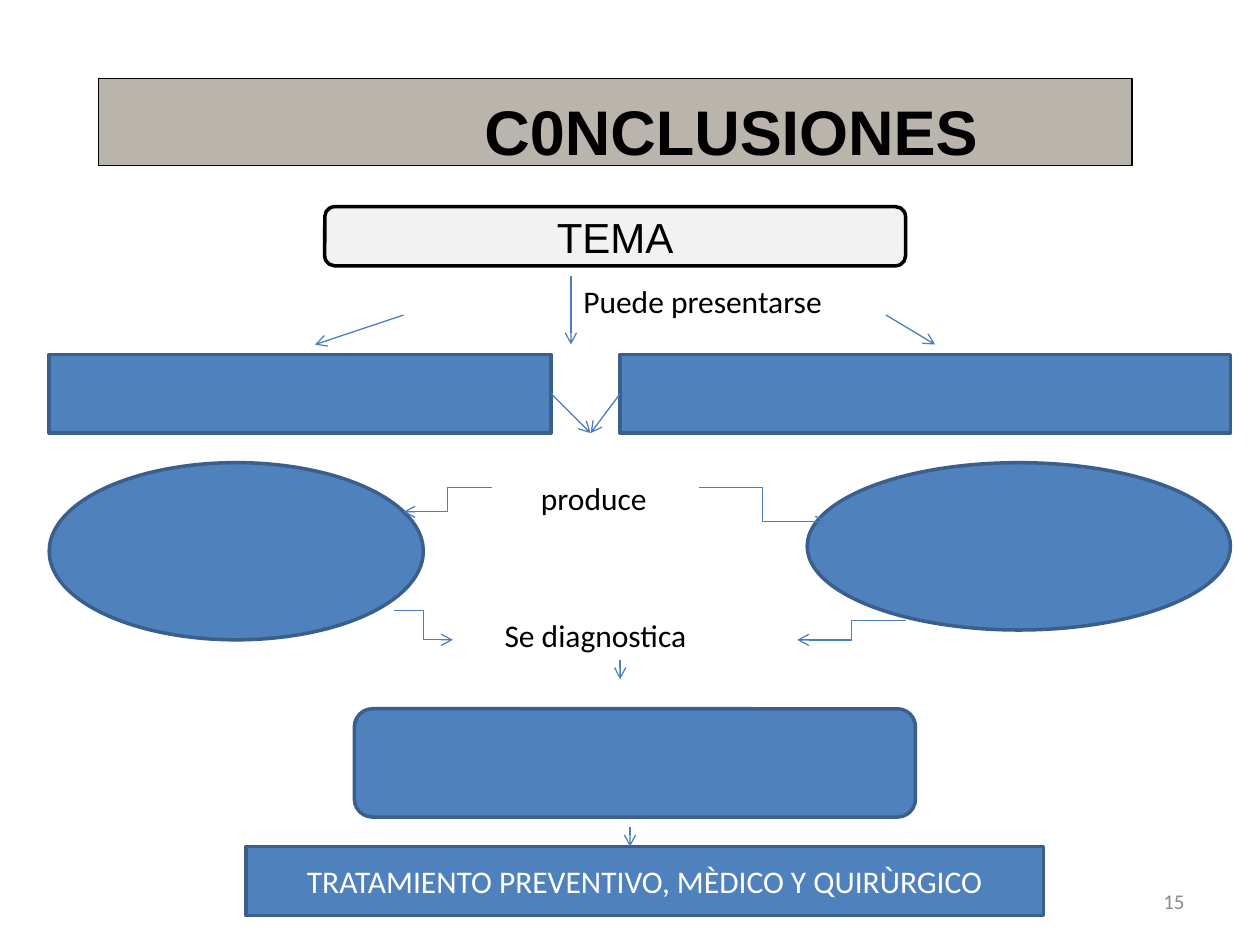
from lxml import etree
from pptx import Presentation, util as u
from pptx.dml.color import RGBColor
from pptx.enum import shapes, text
from pptx.oxml.ns import qn

BLACK = RGBColor(0x00, 0x00, 0x00)
WHITE = RGBColor(0xFF, 0xFF, 0xFF)
TAUPE = RGBColor(0xB9, 0xB5, 0xAD)
PALE = RGBColor(0xF2, 0xF2, 0xF2)
BLUE = RGBColor(0x4F, 0x81, 0xBD)
NAVY = RGBColor(0x3A, 0x5F, 0x8C)
ARROW = RGBColor(0x4B, 0x7E, 0xBC)
GREY = RGBColor(0x8C, 0x8C, 0x8C)

deck = Presentation()
deck.slide_width, deck.slide_height = u.Inches(10), u.Inches(7.5)
slide = deck.slides.add_slide(deck.slide_layouts.get_by_name("Title Only"))
UNIT = deck.slide_width / 128  # square grid: 128 columns by 96 rows


def grid(*cells):
    return [u.Emu(round(cell * UNIT)) for cell in cells]


def write(shape, words, size, font, color, align, anchor=text.MSO_ANCHOR.MIDDLE):
    frame = shape.text_frame
    frame.text = words
    frame.word_wrap = True
    frame.auto_size = text.MSO_AUTO_SIZE.NONE
    frame.vertical_anchor = anchor
    paragraph = frame.paragraphs[0]
    paragraph.alignment = align
    paragraph.font.size = u.Pt(size)
    paragraph.font.name = font
    paragraph.font.color.rgb = color


LEFT, CENTER, RIGHT = text.PP_ALIGN.LEFT, text.PP_ALIGN.CENTER, text.PP_ALIGN.RIGHT

# Title band, with its words set right of the middle
heading = slide.shapes.title
heading.left, heading.top, heading.width, heading.height = grid(10, 8, 105, 8.8)
heading.fill.solid()
heading.fill.fore_color.rgb = TAUPE
heading.line.color.rgb = BLACK
heading.line.width = u.Pt(0.75)
write(heading, "C0NCLUSIONES", 36, "Arial", BLACK, CENTER)
heading.text_frame.paragraphs[0].font.bold = True
heading.text_frame.margin_left = u.Inches(1.94)
heading.text_frame.margin_top = u.Inches(0.13)
heading.text_frame.margin_bottom = 0

# Boxes of the concept map: outline, cells, fill, border
KIND = shapes.MSO_SHAPE
boxes = [
    (KIND.ROUNDED_RECTANGLE, (33, 21, 59, 6), PALE, BLACK, ("TEMA", 24, "Arial", BLACK)),
    (KIND.RECTANGLE, (5, 36, 51, 8), BLUE, NAVY, None),
    (KIND.RECTANGLE, (63, 36, 62, 8), BLUE, NAVY, None),
    (KIND.OVAL, (5, 47, 38, 18), BLUE, NAVY, None),
    (KIND.OVAL, (82, 47, 43, 17), BLUE, NAVY, None),
    (KIND.ROUNDED_RECTANGLE, (36, 72, 57, 11), BLUE, NAVY, None),
    (KIND.RECTANGLE, (25, 86, 81, 7), BLUE, NAVY,
     ("TRATAMIENTO PREVENTIVO, MÈDICO Y QUIRÙRGICO", 18, "Calibri", WHITE)),
]
for outline, cells, fill, border, label in boxes:
    box = slide.shapes.add_shape(outline, *grid(*cells))
    box.shadow.inherit = False
    box.fill.solid()
    box.fill.fore_color.rgb = fill
    box.line.color.rgb = border
    box.line.width = u.Pt(2)
    if label:
        write(box, *label, CENTER)

# Arrows: from column, from row, to column, to row
STRAIGHT, ELBOW = shapes.MSO_CONNECTOR.STRAIGHT, shapes.MSO_CONNECTOR.ELBOW
arrows = {
    ELBOW: [(71, 49.5, 84, 53), (50, 49.5, 41, 52), (40, 62, 46, 65), (92, 63, 81, 65)],
    STRAIGHT: [(90, 32, 95, 35), (41, 32, 32, 35), (63, 40, 60, 44), (56, 40, 60, 44),
               (63, 67, 63, 69), (58, 28, 58, 35), (64, 84, 64, 86)],
}
for route, ends in arrows.items():
    for end in ends:
        arrow = slide.shapes.add_connector(route, *grid(*end))
        arrow.line.color.rgb = ARROW
        arrow.line.width = u.Pt(0.75)
        etree.SubElement(arrow.line._get_or_add_ln(), qn("a:tailEnd"), type="arrow")
        etree.SubElement(arrow._element.spPr, qn("a:effectLst"))

# Linking words
links = [
    ("Puede presentarse", (58, 28, 31.5, 5.2)),
    ("produce", (53.7, 48, 16.4, 5.2)),
    ("Se diagnostica", (50, 62, 25.3, 5.2)),
]
for words, cells in links:
    link = slide.shapes.add_textbox(*grid(*cells))
    write(link, words, 18, "Calibri", BLACK, LEFT, text.MSO_ANCHOR.TOP)

page_number = slide.shapes.add_textbox(*grid(91.7, 89, 29.9, 5.1))
write(page_number, "15", 12, "Calibri", GREY, RIGHT)

deck.save("out.pptx")
